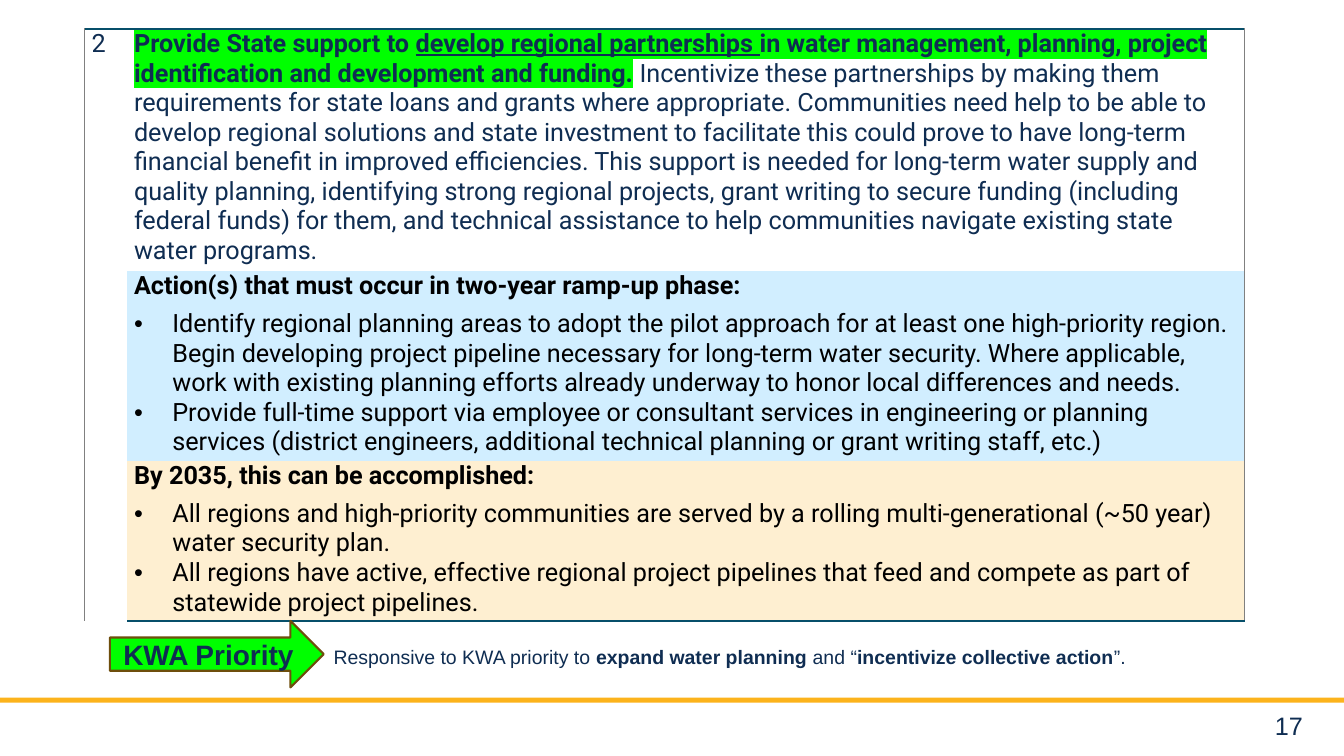
import pptx
import pptx.util
import pptx.dml.color
import pptx.enum.shapes
import pptx.enum.text
import pptx.oxml
import pptx.oxml.ns

Inches, Pt = pptx.util.Inches, pptx.util.Pt
Align = pptx.enum.text.PP_ALIGN
Anchor = pptx.enum.text.MSO_ANCHOR
Shape = pptx.enum.shapes.MSO_SHAPE
NS = pptx.oxml.ns.nsdecls("a")

NAVY, BLACK, LIME, GOLD = "0F2D52", "000000", "00FF00", "FCB31C"
BLUE, CREAM, TEAL, GRAY, BROWN = "D1EEFF", "FEEFD1", "074F6A", "808080", "6E4E0C"
NO_GRID = "{2D5ABB26-0587-4C30-8999-92F81FD0307C}"


def rgb(code):
    return pptx.dml.color.RGBColor.from_string(code)


def write(para, text, size=18, font="Roboto", color=NAVY, bold=False,
          under=False, mark=None, base=None):
    run = para.add_run()
    run.text = text
    face = run.font
    face.size, face.name, face.bold = Pt(size), font, bold
    face.color.rgb = rgb(color)
    if under:
        face.underline = True
    props = run._r.get_or_add_rPr()
    if mark:
        props.find(pptx.oxml.ns.qn("a:solidFill")).addnext(pptx.oxml.parse_xml(
            f'<a:highlight {NS}><a:srgbClr val="{mark}"/></a:highlight>'))
    if base:
        props.set("baseline", str(base * 1000))


class Page:
    def __init__(self, slide, font="Arial"):
        self.slide, self.font = slide, font

    def shape(self, kind, box, fill, line=None):
        item = self.slide.shapes.add_shape(kind, *map(Inches, box))
        item.shadow.inherit = False
        item.fill.solid()
        item.fill.fore_color.rgb = rgb(fill)
        if line:
            item.line.color.rgb = rgb(line)
            item.line.width = Pt(1.5)
        else:
            item.line.fill.background()
        return item

    def label(self, box, parts, align=Align.LEFT, **style):
        frame = self.slide.shapes.add_textbox(*map(Inches, box)).text_frame
        frame.word_wrap = True
        para = frame.paragraphs[0]
        para.alignment = align
        for text, bold in parts:
            write(para, text, font=self.font, bold=bold, **style)

    def table(self, left, top, cols, rows):
        grid = self.slide.shapes.add_table(
            len(rows), len(cols), Inches(left), Inches(top),
            Inches(sum(cols)), Inches(sum(rows))).table
        grid.first_row = grid.horz_banding = False
        grid._tbl.tblPr.find(pptx.oxml.ns.qn("a:tableStyleId")).text = NO_GRID
        for col, wide in zip(grid.columns, cols):
            col.width = Inches(wide)
        for row, high in zip(grid.rows, rows):
            row.height = Inches(high)
        return grid

    def cell(self, cell, fill=None, edges=()):
        cell.margin_left = cell.margin_right = Inches(0.07)
        cell.margin_top = cell.margin_bottom = 0
        if fill:
            cell.fill.solid()
            cell.fill.fore_color.rgb = rgb(fill)
        else:
            cell.fill.background()
        props = cell._tc.get_or_add_tcPr()
        for spot, (side, color, width) in enumerate(edges):
            props.insert(spot, pptx.oxml.parse_xml(
                f'<a:ln{side} {NS} w="{Pt(width)}"><a:solidFill>'
                f'<a:srgbClr val="{color}"/></a:solidFill></a:ln{side}>'))
        para = cell.text_frame.paragraphs[0]
        para.space_after = Pt(6)
        return para

    def bullet(self, frame, text):
        para = frame.add_paragraph()
        props = para._p.get_or_add_pPr()
        props.set("marL", str(Inches(0.38)))
        props.set("indent", str(-Inches(0.38)))
        props.append(pptx.oxml.parse_xml(f'<a:buFont {NS} typeface="Arial"/>'))
        props.append(pptx.oxml.parse_xml(f'<a:buChar {NS} char="•"/>'))
        write(para, text, color=BLACK)


LEAD = [
    ("Provide State support to ", dict(bold=True, mark=LIME)),
    ("develop regional partnerships ", dict(bold=True, mark=LIME, under=True)),
    ("in water management, planning, project identification and development "
     "and funding.", dict(bold=True, mark=LIME)),
    (" ", dict(bold=True)),
    ("Incentivize these partnerships by making them requirements for state "
     "loans and grants where appropriate. Communities need help to be able to "
     "develop regional solutions and state investment to facilitate this could "
     "prove to have long-term financial benefit in improved efficiencies. This "
     "support is needed for long-term water supply and quality planning, "
     "identifying strong regional projects, grant writing to secure funding "
     "(including federal funds) for them, and technical assistance to help "
     "communities navigate existing state water programs.", {}),
]
PHASES = [
    ("Action(s) that must occur in two-year ramp-up phase:", BLUE, [
        "Identify regional planning areas to adopt the pilot approach for at "
        "least one high-priority region. Begin developing project pipeline "
        "necessary for long-term water security. Where applicable, work with "
        "existing planning efforts already underway to honor local differences "
        "and needs.",
        "Provide full-time support via employee or consultant services in "
        "engineering or planning services (district engineers, additional "
        "technical planning or grant writing staff, etc.)"]),
    ("By 2035, this can be accomplished:", CREAM, [
        "All regions and high-priority communities are served by a rolling "
        "multi-generational (~50 year) water security plan.",
        "All regions have active, effective regional project pipelines that "
        "feed and compete as part of statewide project pipelines."]),
]


def main():
    deck = pptx.Presentation()
    deck.slide_width, deck.slide_height = Inches(13.33), Inches(7.5)
    page = Page(deck.slides.add_slide(deck.slide_layouts[6]))

    # Footer bar and page number
    page.shape(Shape.RECTANGLE, (-0.18, 6.92, 13.65, 0.05), GOLD)
    page.label((12.08, 7, 0.94, 0.35), [("17", False)], Align.RIGHT)

    # Table frame: number column merged down the left side
    grid = page.table(0.84, 0.29, (0.42, 11.08), (2.34, 1.84, 1.55))
    left, right = ("L", GRAY, 1), ("R", GRAY, 1)
    ends = {0: [("T", TEAL, 1.5)], 2: [("B", TEAL, 1.5)]}
    grid.cell(0, 0).merge(grid.cell(2, 0))
    paras = []
    for row, fill in enumerate((None, BLUE, CREAM)):
        edge = ends.get(row, [])
        first = page.cell(grid.cell(row, 0), edges=[left] + edge)
        if row == 0:
            write(first, "2")
        paras.append(page.cell(grid.cell(row, 1), fill, [right] + edge))

    # Recommendation and its phases
    for text, style in LEAD:
        write(paras[0], text, **style)
    for row, (head, _, items) in enumerate(PHASES, 1):
        write(paras[row], head, color=BLACK, bold=True)
        for item in items:
            page.bullet(grid.cell(row, 1).text_frame, item)

    # Priority arrow and note
    arrow = page.shape(Shape.RIGHT_ARROW, (1.09, 6.16, 2.12, 0.66), LIME, BROWN)
    arrow.text_frame.vertical_anchor = Anchor.MIDDLE
    para = arrow.text_frame.paragraphs[0]
    para.alignment = Align.CENTER
    write(para, "KWA Priority", size=20, font=page.font, bold=True)
    page.label((3.21, 6.31, 9.53, 0.5), [
        ("Responsive to KWA priority to ", False),
        ("expand water planning ", True), ("and “", False),
        ("incentivize collective action", True), ("”.", False)],
        size=24, base=30)

    deck.save("out.pptx")


if __name__ == "__main__":
    main()
